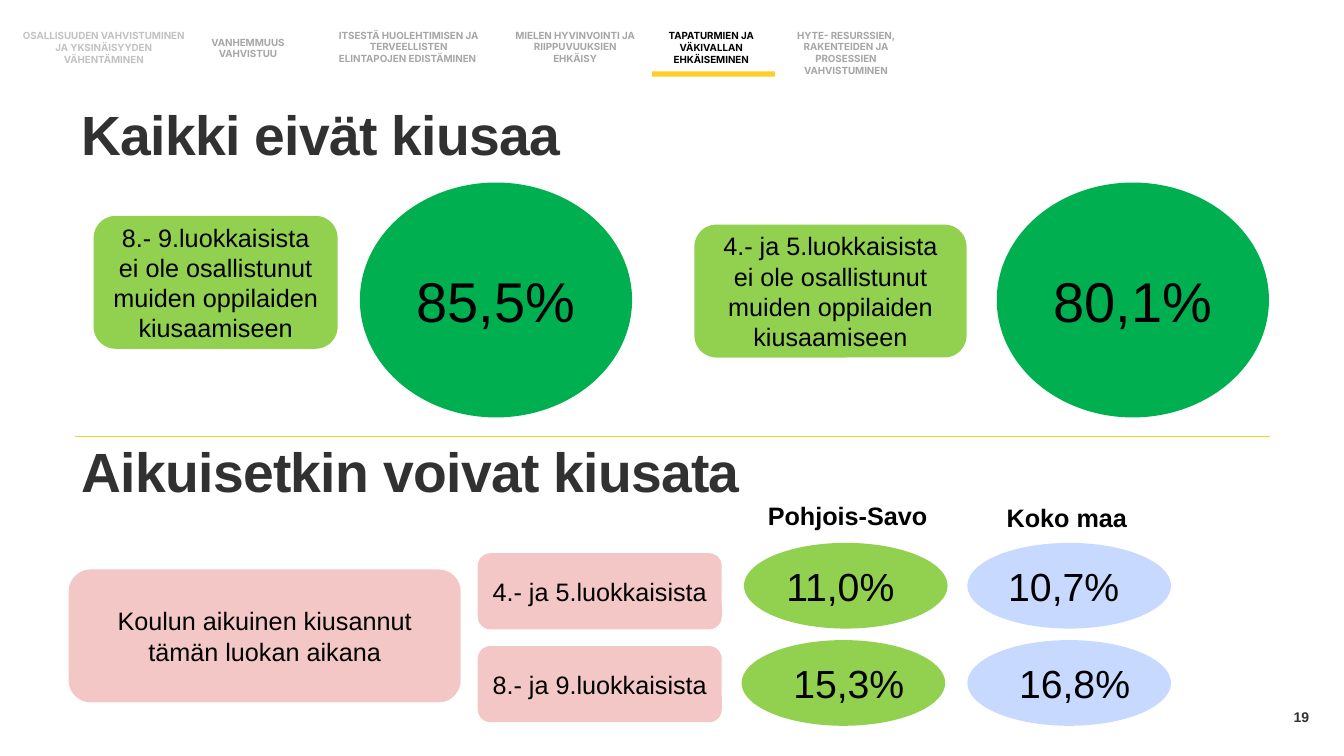
from lxml import etree
from pptx import Presentation
from pptx.dml.color import RGBColor
from pptx.enum import shapes, text
from pptx.oxml import ns
from pptx.util import Cm, Pt

BLACK = RGBColor(0x00, 0x00, 0x00)
CHARCOAL = RGBColor(0x31, 0x31, 0x31)
GREY = RGBColor(0xA6, 0xA6, 0xA6)
PALE_GREY = RGBColor(0xC2, 0xC2, 0xC2)
YELLOW = RGBColor(0xFF, 0xCF, 0x29)
GREEN = RGBColor(0x00, 0xB0, 0x50)
LIME = RGBColor(0x92, 0xD0, 0x50)
PINK = RGBColor(0xF4, 0xC7, 0xC7)
BLUE = RGBColor(0xC8, 0xD9, 0xFF)

RECT = shapes.MSO_SHAPE.RECTANGLE
CARD = shapes.MSO_SHAPE.ROUNDED_RECTANGLE
OVAL = shapes.MSO_SHAPE.OVAL
LEFT, CENTER, RIGHT = (text.PP_ALIGN.LEFT, text.PP_ALIGN.CENTER,
                       text.PP_ALIGN.RIGHT)
TOP, MIDDLE = text.MSO_ANCHOR.TOP, text.MSO_ANCHOR.MIDDLE

# left, top, width, height in cm, then colour and wording by paragraph
THEMES = [
    (0.56, 0.61, 4.11, 1.19, PALE_GREY,
     ["OSALLISUUDEN VAHVISTUMINEN JA YKSINÄISYYDEN VÄHENTÄMINEN"]),
    (4.7, 0.91, 3.1, 0.61, GREY, ["VANHEMMUUS VAHVISTUU"]),
    (8.51, 0.74, 3.58, 0.89, GREY,
     ["ITSESTÄ HUOLEHTIMISEN JA TERVEELLISTEN ELINTAPOJEN EDISTÄMINEN "]),
    (12.88, 0.74, 3.23, 0.89, GREY,
     ["MIELEN HYVINVOINTI JA RIIPPUVUUKSIEN EHKÄISY"]),
    (16.31, 0.76, 3.23, 0.89, BLACK,
     ["TAPATURMIEN JA VÄKIVALLAN EHKÄISEMINEN"]),
    (19.53, 0.74, 3.58, 1.19, GREY,
     ["HYTE- RESURSSIEN, RAKENTEIDEN JA PROSESSIEN", "VAHVISTUMINEN"]),
]


def write(frame, paragraphs, size, color, align, bold=False, font="Arial"):
    frame.word_wrap = True
    for index, wording in enumerate(paragraphs):
        paragraph = frame.add_paragraph() if index else frame.paragraphs[0]
        paragraph.alignment = align
        run = paragraph.add_run()
        run.text = wording
        run.font.name = font
        run.font.size = Pt(size)
        run.font.bold = bold
        run.font.color.rgb = color


def add_label(slide, box, paragraphs, size, color, align=LEFT, anchor=TOP,
              grow=False, font="Arial"):
    """Add bold text without margins; box is left, top, width, height in cm."""
    frame = slide.shapes.add_textbox(*map(Cm, box)).text_frame
    frame.margin_left = frame.margin_right = 0
    frame.margin_top = frame.margin_bottom = 0
    frame.vertical_anchor = anchor
    if grow:
        frame.auto_size = text.MSO_AUTO_SIZE.SHAPE_TO_FIT_TEXT
    write(frame, paragraphs, size, color, align, bold=True, font=font)
    return frame


def add_heading(slide, top, wording):
    frame = add_label(slide, (2.06, top, 20.68, 1.7), [wording], 39.5, CHARCOAL)
    heading = frame.paragraphs[0]
    heading.line_spacing = 0.95
    heading.runs[0].font._element.set("spc", "-50")


def add_figure(slide, kind, box, fill, wording=None, size=18):
    """Add a filled shape; box is left, top, width, height in cm."""
    figure = slide.shapes.add_shape(kind, *map(Cm, box))
    figure.shadow.inherit = False
    figure.fill.solid()
    figure.fill.fore_color.rgb = fill
    figure.line.fill.background()
    if wording:
        figure.text_frame.vertical_anchor = MIDDLE
        write(figure.text_frame, [wording], size, BLACK, CENTER)


def add_divider(slide, left, right, y):
    divider = slide.shapes.add_connector(
        shapes.MSO_CONNECTOR.STRAIGHT, Cm(left), Cm(y), Cm(right), Cm(y))
    divider.line.color.rgb = YELLOW
    divider.line.width = Pt(1)
    etree.SubElement(divider._element.spPr, ns.qn("a:effectLst"))


def add_themes(slide):
    for *box, color, paragraphs in THEMES:
        add_label(slide, box, paragraphs, 7, color, CENTER, MIDDLE,
                  grow=True, font="Inter")
    add_figure(slide, RECT, (16.43, 1.8, 3.1, 0.13), YELLOW)


def add_pupils(slide):
    add_heading(slide, 2.64, "Kaikki eivät kiusaa")
    claim = " ei ole osallistunut muiden oppilaiden kiusaamiseen"
    for grades, left, top, width, share_left, share in [
            ("8.- 9.luokkaisista", 2.36, 5.44, 6.15, 9.07, "85,5% "),
            ("4.- ja 5.luokkaisista", 17.5, 5.66, 6.86, 25.12, "80,1% ")]:
        add_figure(slide, CARD, (left, top, width, 3.35), LIME, grades + claim)
        add_figure(slide, OVAL, (share_left, 4.6, 6.86, 5.92), GREEN, share, 40)


def add_adults(slide):
    add_heading(slide, 11.15, "Aikuisetkin voivat kiusata")
    for left, top, region in [(19.35, 12.62, "Pohjois-Savo"),
                              (25.37, 12.65, "Koko maa")]:
        add_label(slide, (left, top, 4.52, 0.76), [region], 18, BLACK, grow=True)
    add_figure(slide, CARD, (1.73, 14.35, 9.88, 3.35), PINK,
               "Koulun aikuinen kiusannut tämän luokan aikana")
    for grades, top, share_top, local_left, local, national in [
            ("4.- ja 5.luokkaisista", 13.94, 13.68, 18.75, "11,0% ", "10,7% "),
            ("8.- ja 9.luokkaisista", 16.28, 16.13, 18.69, " 15,3%", " 16,8%")]:
        add_figure(slide, CARD, (12.04, top, 6.15, 1.92), PINK, grades)
        for left, fill, share in [(local_left, LIME, local),
                                  (24.38, BLUE, national)]:
            add_figure(slide, OVAL, (left, share_top, 5.13, 2.16), fill,
                       share, 28)


def main():
    deck = Presentation()
    deck.slide_width, deck.slide_height = Cm(33.87), Cm(19.05)
    slide = deck.slides.add_slide(deck.slide_layouts[6])
    add_themes(slide)
    add_pupils(slide)
    add_divider(slide, 1.88, 32, 11)
    add_adults(slide)
    add_label(slide, (25.37, 17.55, 7.62, 1.02), ["19"], 10, CHARCOAL,
              RIGHT, MIDDLE)
    deck.save("out.pptx")


if __name__ == "__main__":
    main()
